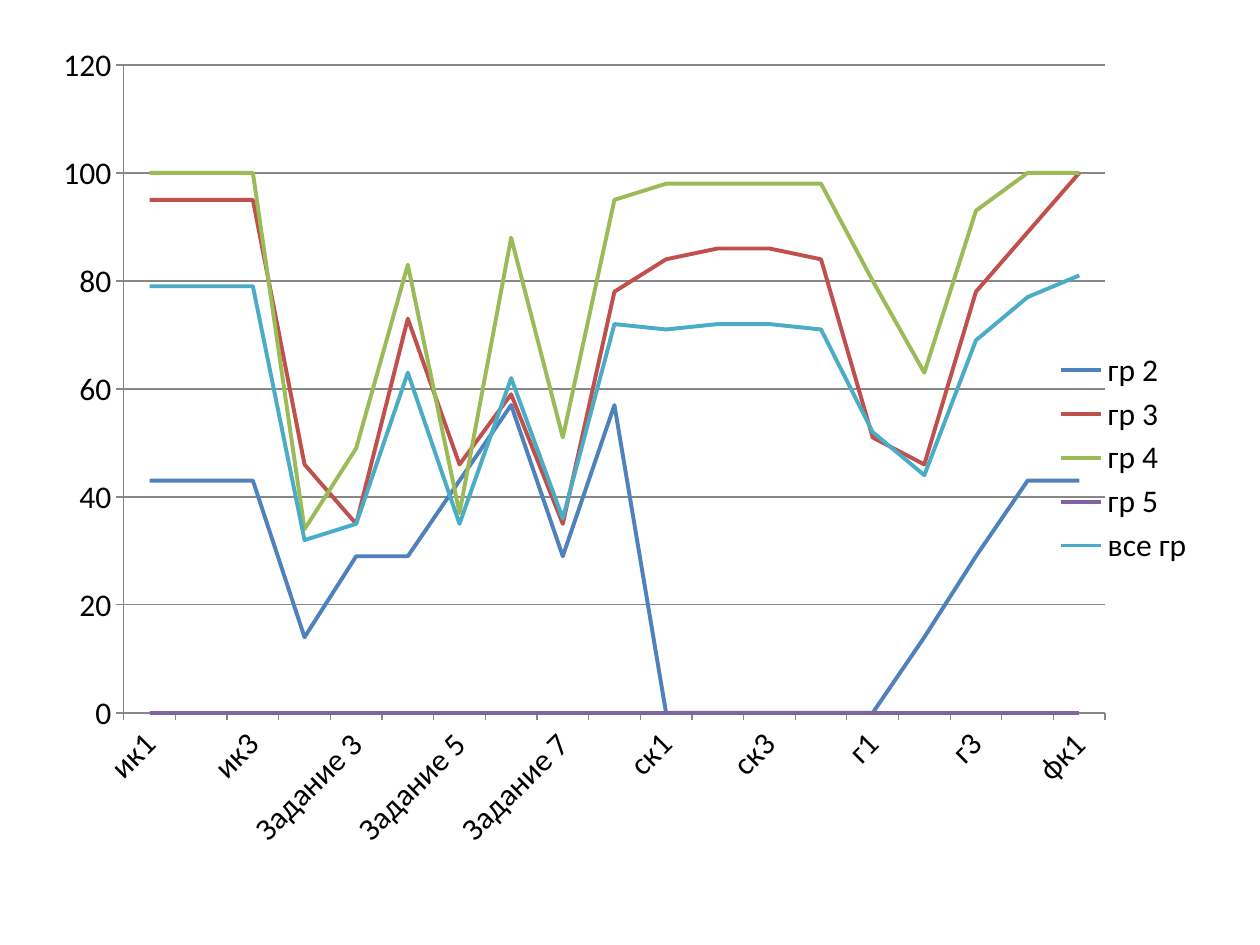
import pptx
import pptx.chart.data
import pptx.dml.color
import pptx.enum.chart
import pptx.oxml
import pptx.oxml.ns
import pptx.util
from pptx.util import Inches, Pt

CATEGORIES = (
    ["ик1", "ик2", "ик3"]
    + [f"Задание {n}" for n in range(2, 9)]
    + ["ск1", "ск2", "ск3", "ск4", "г1", "г2", "г3", "г4", "фк1"]
)
SERIES = {
    "гр 2": [43, 43, 43, 14, 29, 29, 43, 57, 29, 57, 0, 0, 0, 0, 0, 14, 29, 43, 43],
    "гр 3": [95, 95, 95, 46, 35, 73, 46, 59, 35, 78, 84, 86, 86, 84, 51, 46, 78, 89, 100],
    "гр 4": [100, 100, 100, 34, 49, 83, 37, 88, 51, 95, 98, 98, 98, 98, 80, 63, 93, 100, 100],
    "гр 5": [0] * len(CATEGORIES),
    "все гр": [79, 79, 79, 32, 35, 63, 35, 62, 36, 72, 71, 72, 72, 71, 52, 44, 69, 77, 81],
}
COLORS = {
    "гр 2": "4F81BD",
    "гр 3": "C0504D",
    "гр 4": "9BBB59",
    "гр 5": "8064A2",
    "все гр": "4BACC6",
    "text": "000000",
    "grid": "878787",
}
PLOT_BOX = (0.076, 0.034, 0.843, 0.777)
LEGEND_BOX = (0.87, 0.37, 0.13, 0.27)


def rgb(name):
    return pptx.dml.color.RGBColor.from_string(COLORS[name])


def layout_xml(box, inner=False):
    """Return a manual layout placed by fractions of the chart area."""
    target = '<c:layoutTarget val="inner"/>' if inner else ""
    modes = '<c:xMode val="edge"/><c:yMode val="edge"/>'
    sizes = "".join(f'<c:{tag} val="{v}"/>' for tag, v in zip("xywh", box))
    return pptx.oxml.parse_xml(
        f'<c:layout {pptx.oxml.ns.nsdecls("c")}>'
        f"<c:manualLayout>{target}{modes}{sizes}</c:manualLayout></c:layout>"
    )


def place_parts(chart):
    root = chart.element if hasattr(chart, "element") else chart._chartSpace
    for old in root.xpath(".//c:plotArea/c:layout | .//c:legend/c:layout"):
        old.getparent().remove(old)
    root.xpath(".//c:plotArea")[0].insert(0, layout_xml(PLOT_BOX, inner=True))
    root.xpath(".//c:legend/c:legendPos")[0].addnext(layout_xml(LEGEND_BOX))


def format_axes(chart):
    value, category = chart.value_axis, chart.category_axis
    value.minimum_scale, value.maximum_scale, value.major_unit = 0, 120, 20
    value.has_major_gridlines = True
    for line in (value.format.line, category.format.line, value.major_gridlines.format.line):
        line.color.rgb = rgb("grid")
        line.width = Pt(0.75)
    for axis in (value, category):
        axis.major_tick_mark = pptx.enum.chart.XL_TICK_MARK.OUTSIDE
        axis.minor_tick_mark = pptx.enum.chart.XL_TICK_MARK.NONE
        font = axis.tick_labels.font
        font.size, font.name = Pt(18), "Calibri"
        font.color.rgb = rgb("text")
    category._element.xpath("c:txPr/a:bodyPr")[0].set("rot", "-2700000")


prs = pptx.Presentation()
prs.slide_width, prs.slide_height = Inches(10), Inches(7.5)
s = prs.slides.add_slide(prs.slide_layouts[6])

data = pptx.chart.data.CategoryChartData()
data.categories = CATEGORIES
for name, values in SERIES.items():
    data.add_series(name, values)

chart = s.shapes.add_chart(
    pptx.enum.chart.XL_CHART_TYPE.LINE,
    Inches(0.28), Inches(0.29), Inches(9.24), Inches(6.62), data,
).chart
chart.has_title = False
chart.font.size, chart.font.name = Pt(18), "Calibri"
chart.font.color.rgb = rgb("text")
chart.plots[0].vary_by_categories = False

for series in chart.plots[0].series:
    series.smooth = False
    series.marker.style = pptx.enum.chart.XL_MARKER_STYLE.NONE
    series.format.line.color.rgb = rgb(series.name)
    series.format.line.width = Pt(2.25)

chart.has_legend = True
chart.legend.position = pptx.enum.chart.XL_LEGEND_POSITION.RIGHT
chart.legend.include_in_layout = False
format_axes(chart)
place_parts(chart)

prs.save("out.pptx")
